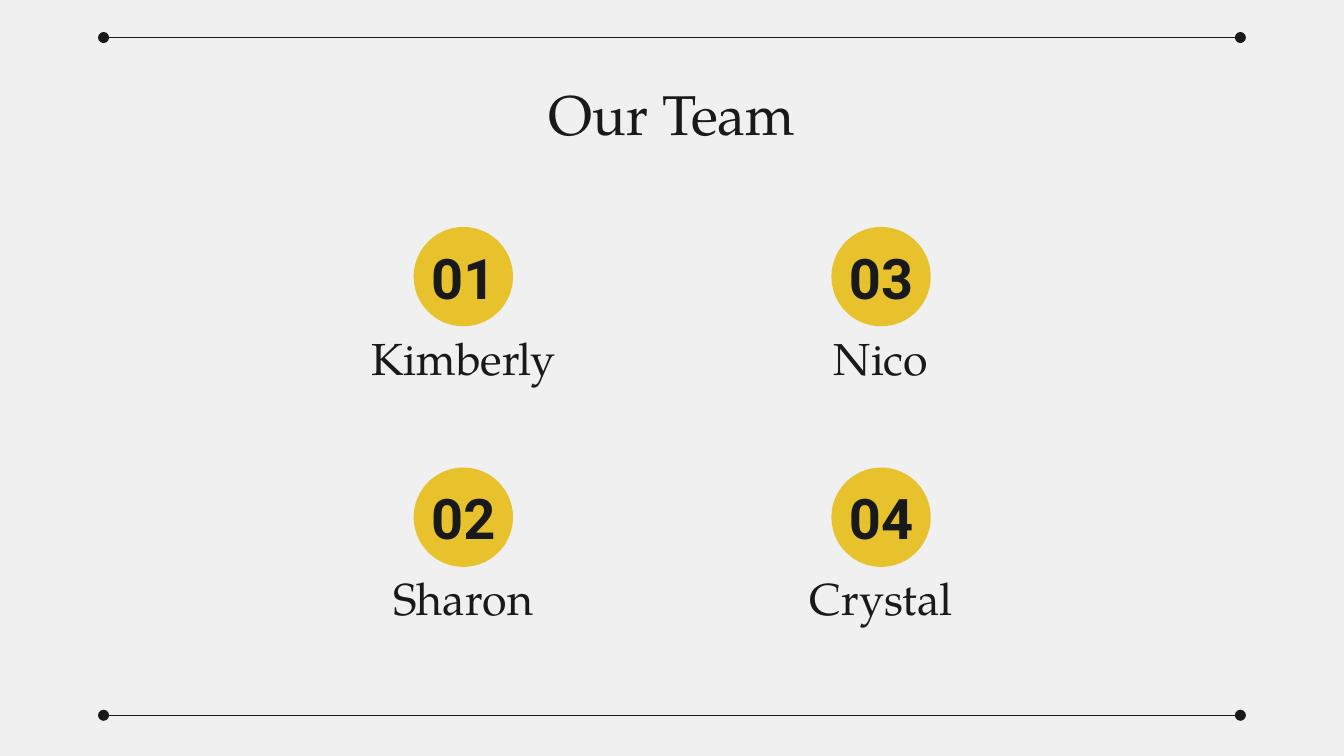
from lxml import etree
from pptx import Presentation
from pptx.dml.color import RGBColor
from pptx.enum.shapes import MSO_CONNECTOR, MSO_SHAPE
from pptx.enum.text import MSO_ANCHOR, MSO_AUTO_SIZE, PP_ALIGN
from pptx.oxml.ns import qn
from pptx.util import Pt

PAPER = RGBColor(0xF0, 0xF0, 0xF0)
INK = RGBColor(0x19, 0x19, 0x19)
YELLOW = RGBColor(0xE7, 0xC2, 0x2C)
SERIF, SANS = "TeX Gyre Pagella", "Roboto"


def set_text(sp, text, font=SERIF, size=24, bold=False, anchor=MSO_ANCHOR.MIDDLE):
    tf = sp.text_frame
    tf.word_wrap = True
    tf.auto_size = MSO_AUTO_SIZE.NONE
    tf.vertical_anchor = anchor
    tf.margin_left = tf.margin_right = tf.margin_top = tf.margin_bottom = Pt(7.2)
    p = tf.paragraphs[0]
    p.alignment = PP_ALIGN.CENTER
    r = p.add_run()
    r.text = text
    r.font.name = font
    r.font.size = Pt(size)
    r.font.bold = bold
    r.font.color.rgb = INK


prs = Presentation()
prs.slide_width, prs.slide_height = Pt(720), Pt(405)
s = prs.slides.add_slide(prs.slide_layouts[5])
s.background.fill.solid()
s.background.fill.fore_color.rgb = PAPER

# Title
title = s.shapes.title
title.left, title.top, title.width, title.height = Pt(56.7), Pt(35.3), Pt(606.6), Pt(45.4)
set_text(title, "Our Team", size=30, anchor=MSO_ANCHOR.TOP)

# Team members, numbered down each column
DIAMETER, NUMBER_H = 53.2, 32.4
NAME_W, NAME_H = 157, 38.2
for i, name in enumerate(["Kimberly", "Sharon", "Nico", "Crystal"]):
    col, row = divmod(i, 2)
    cx = 248.2 + col * 223.8
    top = 121.6 + row * 128.9
    left = cx - DIAMETER / 2

    circle = s.shapes.add_shape(MSO_SHAPE.OVAL, Pt(left), Pt(top), Pt(DIAMETER), Pt(DIAMETER))
    circle.shadow.inherit = False
    circle.fill.solid()
    circle.fill.fore_color.rgb = YELLOW
    circle.line.fill.background()

    number_top = top + (DIAMETER - NUMBER_H) / 2
    number = s.shapes.add_textbox(Pt(left), Pt(number_top), Pt(DIAMETER), Pt(NUMBER_H))
    set_text(number, f"{i + 1:02d}", font=SANS, size=30, bold=True)

    label = s.shapes.add_textbox(Pt(cx - NAME_W / 2), Pt(top + DIAMETER), Pt(NAME_W), Pt(NAME_H))
    set_text(label, name, anchor=MSO_ANCHOR.BOTTOM)

# Rules with round ends at top and bottom
for y in (20.1, 383.2):
    rule = s.shapes.add_connector(MSO_CONNECTOR.STRAIGHT, Pt(55.5), Pt(y), Pt(664.5), Pt(y))
    rule.line.color.rgb = INK
    rule.line.width = Pt(0.75)
    ln = rule.line._get_or_add_ln()
    for end in ("a:headEnd", "a:tailEnd"):
        etree.SubElement(ln, qn(end), type="oval")
    etree.SubElement(rule._element.spPr, qn("a:effectLst"))

prs.save("out.pptx")
